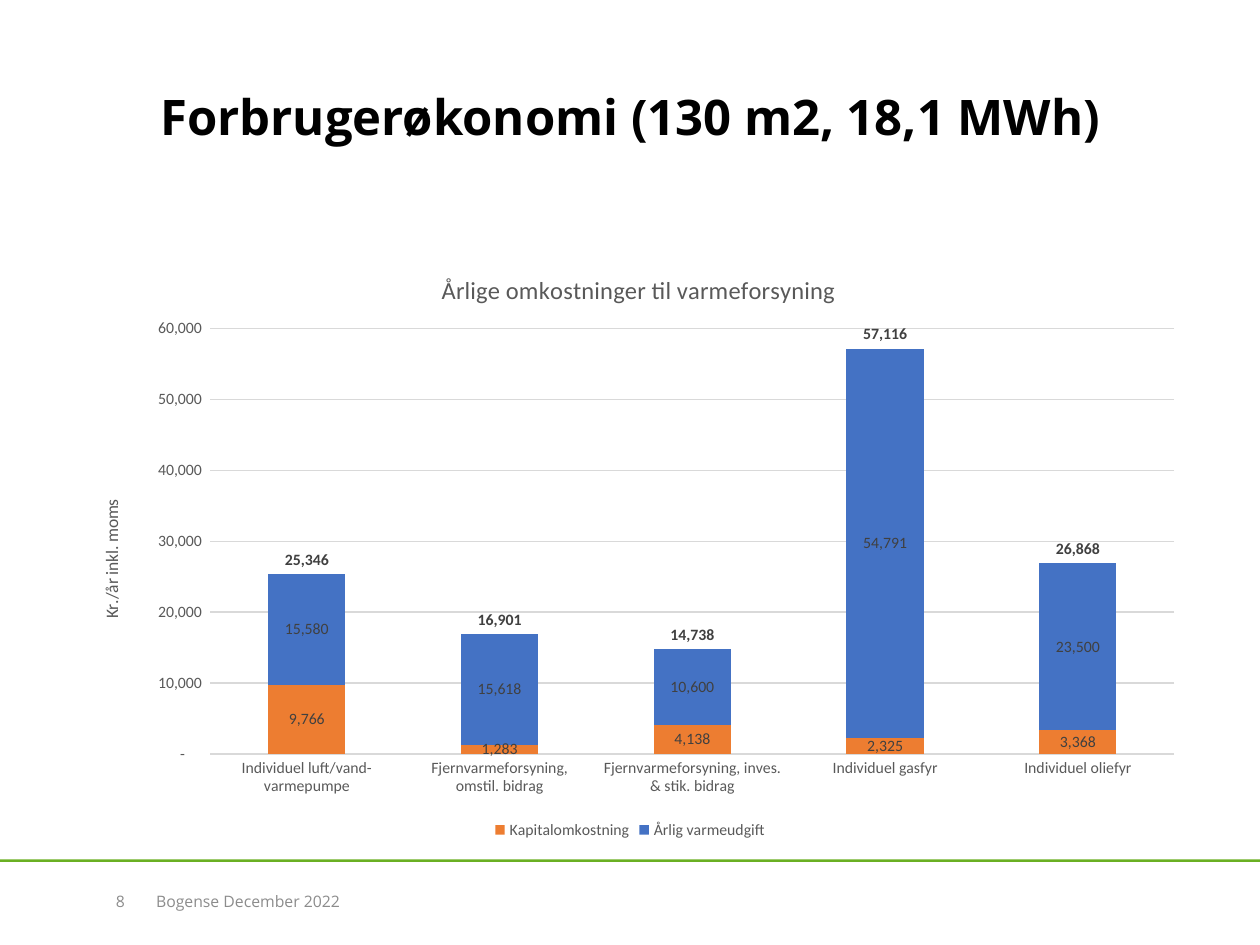
from lxml import etree
from pptx import Presentation
from pptx.chart.data import CategoryChartData
from pptx.dml.color import RGBColor
from pptx.enum import chart as ch, shapes, text
from pptx.oxml.ns import qn
from pptx.util import Inches, Pt

GREY = "595959"
PALE = "D9D9D9"
NUM = '_(* #,##0_);_(* \\(#,##0\\);_(* "-"??_);_('
CATS = [
    "Individuel luft/vand-varmepumpe",
    "Fjernvarmeforsyning, omstil. bidrag",
    "Fjernvarmeforsyning, inves. & stik. bidrag",
    "Individuel gasfyr",
    "Individuel oliefyr",
]
COSTS = [
    ("Kapitalomkostning", [9766, 1283, 4138, 2325, 3368], "ED7D31"),
    ("Årlig varmeudgift", [15580, 15618, 10600, 54791, 23500], "4472C4"),
]
TOTALS = [25346, 16901, 14738, 57116, 26868]


def rgb(code):
    return RGBColor.from_string(code)


def style(font, size, color, name="Calibri", bold=False):
    font.name, font.size, font.bold = name, Pt(size), bold
    font.color.rgb = rgb(color)


def add_text(slide, box, words, size, color, align, bold=False):
    frame = slide.shapes.add_textbox(*map(Inches, box)).text_frame
    frame.word_wrap = True
    frame.vertical_anchor = text.MSO_ANCHOR.MIDDLE
    para = frame.paragraphs[0]
    para.alignment = align
    run = para.add_run()
    run.text = words
    style(run.font, size, color, "Open Sans", bold)
    return para


def add_title(slide, box):
    add_text(slide, box, "Forbrugerøkonomi (130 m2, 18,1 MWh)", 28, "000000",
             text.PP_ALIGN.CENTER, True)


def add_footer(slide, box):
    left, top, width, height = box
    rule = slide.shapes.add_shape(
        shapes.MSO_SHAPE.RECTANGLE, *map(Inches, (left, top, width, 0.02)))
    rule.shadow.inherit = False
    rule.fill.solid()
    rule.fill.fore_color.rgb = rgb("6AB023")
    rule.line.fill.background()
    align = text.PP_ALIGN
    for dx, wide, words, side in (
            (0.51, 0.58, "8", align.RIGHT),
            (1.14, 6.85, "Bogense December 2022", align.LEFT)):
        spot = (left + dx, top + 0.13, wide, height)
        para = add_text(slide, spot, words, 9, "8C8C8C", side)
        para.space_after = Pt(6)


def set_layout(node, index, **parts):
    """Place a chart part by fractions of the chart's size."""
    for old in node.findall(qn("c:layout")):
        node.remove(old)
    layout = etree.Element(qn("c:layout"))
    node.insert(index, layout)
    manual = etree.SubElement(layout, qn("c:manualLayout"))
    if "w" in parts:
        etree.SubElement(manual, qn("c:layoutTarget")).set("val", "inner")
    for key in ("x", "y"):
        etree.SubElement(manual, qn(f"c:{key}Mode")).set("val", "edge")
    for key, val in parts.items():
        etree.SubElement(manual, qn(f"c:{key}")).set("val", str(val))


def set_title(title, words, size, x, y):
    para = title.text_frame.paragraphs[0]
    run = para.add_run()
    run.text = words
    style(run.font, size, GREY)
    set_layout(title._element, 1, x=x, y=y)


def style_axes(chart):
    cat, val = chart.category_axis, chart.value_axis
    for axis in (cat, val):
        axis.major_tick_mark = axis.minor_tick_mark = ch.XL_TICK_MARK.NONE
        style(axis.tick_labels.font, 9, GREY)
    val.minimum_scale, val.maximum_scale, val.major_unit = 0, 60000, 10000
    val.tick_labels.number_format = NUM
    val.tick_labels.number_format_is_linked = False
    val.format.line.fill.background()
    for line in (cat.format.line, val.major_gridlines.format.line):
        line.color.rgb = rgb(PALE)
        line.width = Pt(0.75)
    set_title(val.axis_title, "Kr./år inkl. moms", 10, 0.03, 0.42)


def style_bars(plot):
    plot.gap_width, plot.overlap, plot.vary_by_categories = 150, 100, False
    colors = [color for _, _, color in COSTS] + [None]
    for bars, color in zip(plot.series, colors):
        fill = bars.format.fill
        labels = bars.data_labels
        place = ch.XL_LABEL_POSITION
        if color:
            fill.solid()
            fill.fore_color.rgb = rgb(color)
        else:
            fill.background()
        bars.format.line.fill.background()
        labels.show_value = True
        labels.number_format = NUM
        labels.number_format_is_linked = False
        labels.position = place.CENTER if color else place.INSIDE_BASE
        style(labels.font, 9, "404040", bold=color is None)


def add_legend(chart, hidden):
    chart.has_legend = True
    legend = chart.legend
    legend.position = ch.XL_LEGEND_POSITION.BOTTOM
    legend.include_in_layout = False
    style(legend.font, 9, GREY)
    entry = etree.Element(qn("c:legendEntry"))
    etree.SubElement(entry, qn("c:idx")).set("val", str(hidden))
    etree.SubElement(entry, qn("c:delete")).set("val", "1")
    legend._element.insert(1, entry)


def add_costs(slide, box):
    data = CategoryChartData(number_format=NUM)
    data.categories = CATS
    for name, vals, _ in COSTS:
        data.add_series(name, vals)
    data.add_series("Series 3", TOTALS)
    chart = slide.shapes.add_chart(
        ch.XL_CHART_TYPE.COLUMN_STACKED, *map(Inches, box), data).chart
    style(chart.font, 10, "000000")
    set_title(chart.chart_title, "Årlige omkostninger til varmeforsyning",
              14, 0.33, 0.04)
    style_axes(chart)
    style_bars(chart.plots[0])
    add_legend(chart, len(COSTS))
    area = chart._chartSpace.find(".//" + qn("c:plotArea"))
    set_layout(area, 0, x=0.13, y=0.14, w=0.85, h=0.71)


def main():
    deck = Presentation()
    deck.slide_width, deck.slide_height = Inches(10), Inches(7.5)
    slide = deck.slides.add_slide(deck.slide_layouts[6])
    add_footer(slide, (0, 6.82, 10, 0.4))
    add_title(slide, (0.5, 0.6, 9, 0.64))
    add_costs(slide, (0.5, 1.94, 9, 4.76))
    deck.save("out.pptx")


if __name__ == "__main__":
    main()
